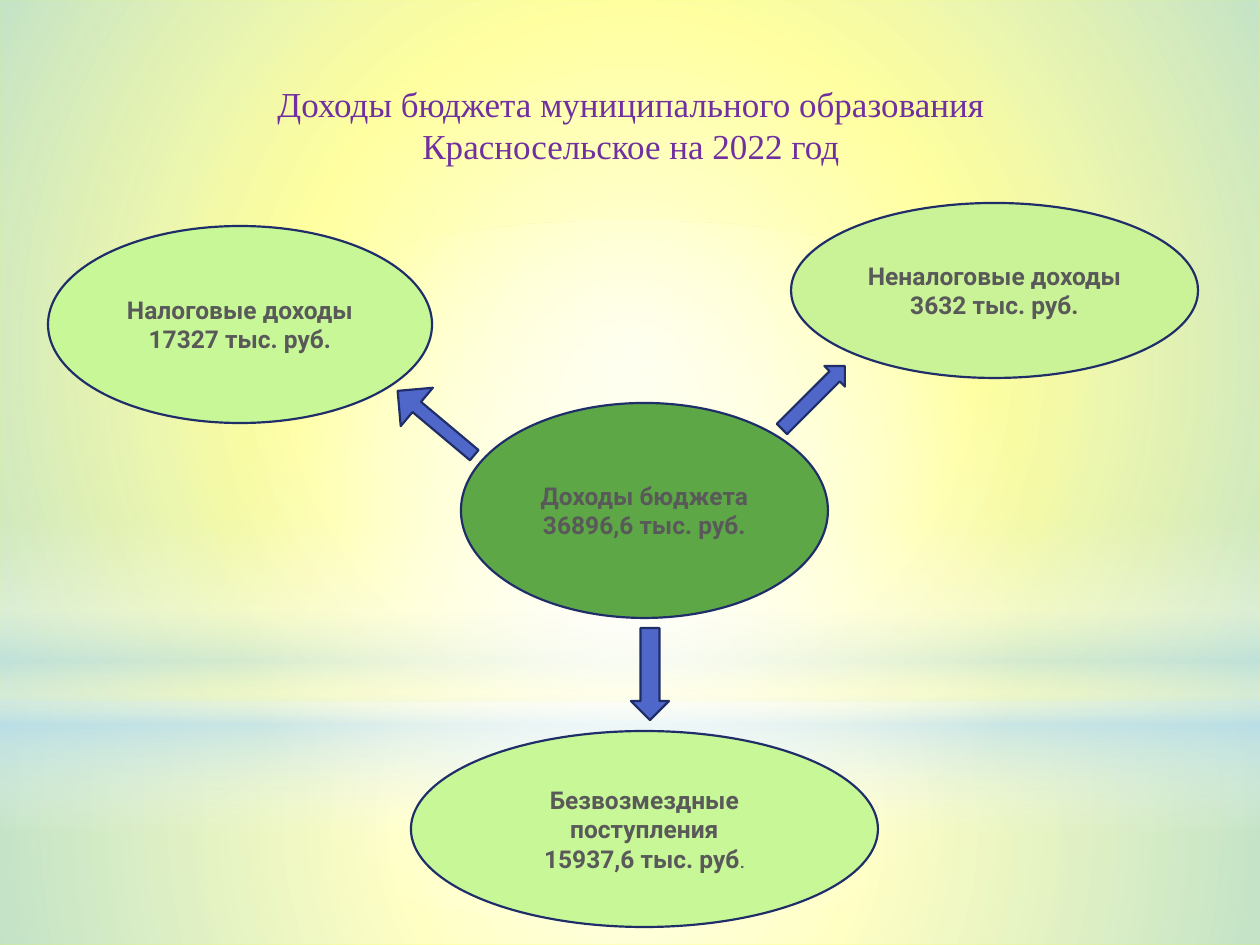
import pptx
import pptx.dml.color
import pptx.enum.shapes
import pptx.enum.text
import pptx.oxml
import pptx.oxml.ns
import pptx.util

KIND = pptx.enum.shapes.MSO_SHAPE
SCALE = 914400 / 126
WIDE, HIGH = 1260, 945
NAVY, BLUE, LIME, GREY = "1F2E69", "4E67C8", "C7F797", "595959"
WHITE, SKY = "FFFFFF", "B4DCFA"


def px(*nums):
    return [pptx.util.Emu(round(n * SCALE)) for n in nums]


def color(code):
    return pptx.dml.color.RGBColor.from_string(code)


def style(run, font, size, code, bold):
    run.font.name = font
    run.font.size = pptx.util.Pt(size)
    run.font.color.rgb = color(code)
    run.font.bold = bold


def write(frame, text, font="Roboto", size=14, code=GREY, bold=True):
    """Each newline starts a paragraph; a vertical tab breaks the line."""
    frame.word_wrap = True
    frame.vertical_anchor = pptx.enum.text.MSO_ANCHOR.MIDDLE
    frame.text = text
    for par in frame.paragraphs:
        par.alignment = pptx.enum.text.PP_ALIGN.CENTER
        for run in par.runs:
            style(run, font, size, code, bold)


class Deck:
    def __init__(self):
        self.file = pptx.Presentation()
        self.file.slide_width, self.file.slide_height = px(WIDE, HIGH)
        self.slide = self.file.slides.add_slide(self.file.slide_layouts[5])

    def back(self, code):
        fill = self.slide.background.fill
        fill.solid()
        fill.fore_color.rgb = color(code)

    def shape(self, kind, box):
        item = self.slide.shapes.add_shape(kind, *px(*box))
        item.shadow.inherit = False
        return item

    def glow(self, kind, box, stops, shade):
        """Stops are (place, colour, opacity), places and opacity in percent."""
        item = self.shape(kind, box)
        item.line.fill.background()
        item.fill.background()
        marks = "".join(
            f'<a:gs pos="{place * 1000}"><a:srgbClr val="{code}">'
            f'<a:alpha val="{alpha * 1000}"/></a:srgbClr></a:gs>'
            for place, code, alpha in stops)
        grad = pptx.oxml.parse_xml(
            f'<a:gradFill {pptx.oxml.ns.nsdecls("a")} rotWithShape="1">'
            f'<a:gsLst>{marks}</a:gsLst>{shade}</a:gradFill>')
        props = item._element.spPr
        props.replace(props.find(pptx.oxml.ns.qn("a:noFill")), grad)

    def title(self, text, box):
        item = self.slide.shapes.title
        item.left, item.top, item.width, item.height = px(*box)
        write(item.text_frame, text, font="Times New Roman", size=20,
              code="7030A0", bold=False)
        item.text_frame.auto_size = pptx.enum.text.MSO_AUTO_SIZE.NONE
        # Lift the title above the glow layers
        item._element.getparent().append(item._element)

    def solid(self, kind, box, code):
        item = self.shape(kind, box)
        item.fill.solid()
        item.fill.fore_color.rgb = color(code)
        item.line.color.rgb = color(NAVY)
        item.line.width = pptx.util.Pt(1.25)
        return item

    def oval(self, text, box, code=LIME, kind=KIND.FLOWCHART_CONNECTOR):
        item = self.solid(kind, box, code)
        write(item.text_frame, text)
        return item.text_frame

    def arrow(self, kind, box, turn=0, shaft=0.5):
        item = self.solid(kind, box, BLUE)
        item.rotation = turn
        item.adjustments[0] = shaft


def main():
    deck = Deck()
    deck.back("FFFF00")

    round_shade = ('<a:path path="circle"><a:fillToRect l="50000" t="50000" '
                   'r="50000" b="50000"/></a:path>')
    down_shade = '<a:lin ang="5400000" scaled="0"/>'
    split = 703
    deck.glow(KIND.RECTANGLE, (0, split, WIDE, HIGH - split),
              [(0, WHITE, 91), (37, WHITE, 76), (100, SKY, 79)], round_shade)
    deck.glow(KIND.RECTANGLE, (0, 0, WIDE, split),
              [(0, WHITE, 89), (48, WHITE, 62), (100, SKY, 79)], round_shade)
    deck.glow(KIND.RECTANGLE, (0, 519, WIDE, 315),
              [(0, WHITE, 0), (29, WHITE, 30), (45, SKY, 40),
               (55, WHITE, 26), (65, SKY, 60), (100, WHITE, 0)], down_shade)
    deck.glow(KIND.OVAL, (0, 221, WIDE, split),
              [(0, WHITE, 100), (56, WHITE, 0)], round_shade)

    deck.title("Доходы бюджета муниципального образования\n"
               "Красносельское на 2022 год", (64, 55, 1134, 139))

    deck.oval("Неналоговые доходы\v3632 тыс. руб.", (791, 203, 407, 175),
              code="CAF297")
    deck.oval("Налоговые доходы\v17327 тыс. руб.", (48, 226, 384, 197))
    grants = deck.oval("Безвозмездные поступления\n15937,6 тыс. руб",
                       (411, 731, 467, 196))
    stop = grants.paragraphs[-1].add_run()
    stop.text = "."
    style(stop, "Cabin", 14, GREY, False)

    deck.arrow(KIND.DOWN_ARROW, (631, 628, 38, 92))
    deck.oval("Доходы бюджета\v36896,6 тыс. руб.", (461, 403, 367, 215),
              code="5EA747", kind=KIND.OVAL)
    deck.arrow(KIND.UP_ARROW, (411, 373, 50, 100), turn=-50, shaft=0.265)
    deck.arrow(KIND.RIGHT_ARROW, (769, 383, 89, 29), turn=-45)

    deck.file.save("out.pptx")


if __name__ == "__main__":
    main()
